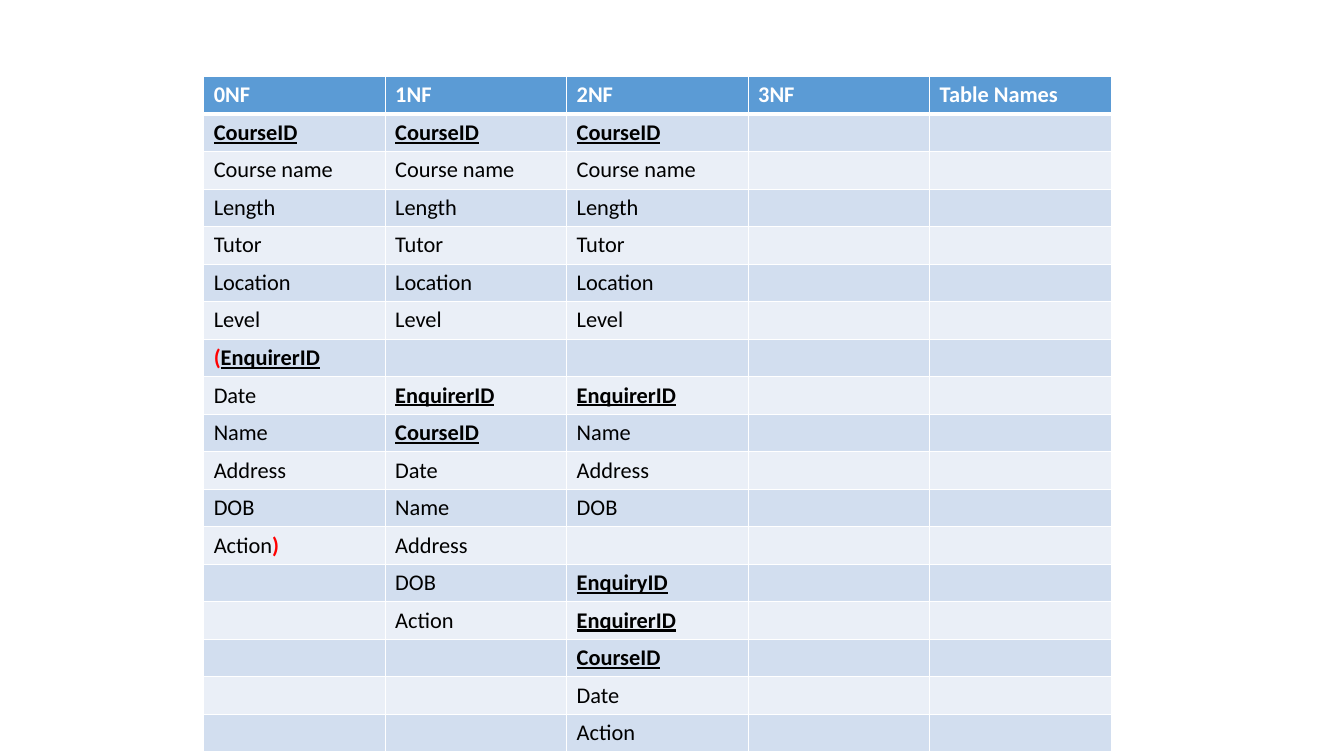
import itertools
from dataclasses import dataclass

import pptx
import pptx.dml.color
import pptx.oxml
import pptx.oxml.ns
import pptx.util

Inches = pptx.util.Inches
Pt = pptx.util.Pt


@dataclass(frozen=True)
class Theme:
    font: str = "Calibri"
    size: int = 16
    text: str = "000000"
    header_text: str = "FFFFFF"
    bracket: str = "FF0000"
    header_fill: str = "5B9BD5"
    bands: tuple = ("D2DEEF", "EAEFF7")
    border: str = "FFFFFF"
    thin: int = 1
    thick: int = 3


THEME = Theme()

HEADINGS = ["0NF", "1NF", "2NF", "3NF", "Table Names"]
COURSE = ["CourseID", "Course name", "Length", "Tutor", "Location", "Level"]
PERSON = ["Name", "Address", "DOB"]
NORMAL_FORMS = [
    COURSE + ["(EnquirerID", "Date", *PERSON, "Action)"],
    COURSE + ["", "EnquirerID", "CourseID", "Date", *PERSON, "Action"],
    COURSE + ["", "EnquirerID", *PERSON, "",
              "EnquiryID", "EnquirerID", "CourseID", "Date", "Action"],
    [],
    [],
]


def rgb(value):
    return pptx.dml.color.RGBColor.from_string(value)


def set_borders(cell, widths):
    """Draw the cell's edges; widths maps L, R, T, B to points."""
    properties = cell._tc.get_or_add_tcPr()
    for side, width in widths.items():
        properties.append(pptx.oxml.parse_xml(
            f'<a:ln{side} {pptx.oxml.ns.nsdecls("a")} w="{Pt(width)}">'
            f'<a:solidFill><a:srgbClr val="{THEME.border}"/></a:solidFill>'
            f'</a:ln{side}>'))


def write_field(cell, field, is_header):
    """Write a field name: keys are bold and underlined, brackets red."""
    paragraph = cell.text_frame.paragraphs[0]
    if not field:
        paragraph._p.append(pptx.oxml.parse_xml(
            f'<a:endParaRPr {pptx.oxml.ns.nsdecls("a")} sz="{THEME.size * 100}"/>'))
    for is_bracket, letters in itertools.groupby(field, lambda letter: letter in "()"):
        run = paragraph.add_run()
        run.text = "".join(letters)
        is_key = run.text.endswith("ID")
        color = THEME.header_text if is_header else THEME.text
        look = {
            "name": THEME.font,
            "size": Pt(THEME.size),
            "bold": is_header or is_key or is_bracket,
            "underline": is_key,
        }
        for attribute, value in look.items():
            setattr(run.font, attribute, value)
        run.font.color.rgb = rgb(THEME.bracket if is_bracket else color)


def add_normalisation_table(slide, left, top, width, row_height):
    fields = [HEADINGS, *itertools.zip_longest(*NORMAL_FORMS, fillvalue="")]
    table = slide.shapes.add_table(
        len(fields), len(HEADINGS), left, top, width, row_height * len(fields)).table
    for column in table.columns:
        column.width = width // len(HEADINGS)
    for row_number, row_fields in enumerate(fields):
        table.rows[row_number].height = row_height
        is_header = row_number == 0
        fill = THEME.header_fill if is_header else THEME.bands[(row_number - 1) % 2]
        widths = dict.fromkeys("LRTB", THEME.thin)
        if is_header:
            widths["B"] = THEME.thick
        elif row_number == 1:
            widths["T"] = THEME.thick
        for column_number, field in enumerate(row_fields):
            cell = table.cell(row_number, column_number)
            set_borders(cell, widths)
            cell.fill.solid()
            cell.fill.fore_color.rgb = rgb(fill)
            write_field(cell, field, is_header)


def main():
    presentation = pptx.Presentation()
    presentation.slide_width = Inches(13.33)
    presentation.slide_height = Inches(7.5)
    slide = presentation.slides.add_slide(presentation.slide_layouts[6])
    add_normalisation_table(slide, Inches(2.02), Inches(0.76), Inches(9), Inches(0.35))
    presentation.save("out.pptx")


if __name__ == "__main__":
    main()
